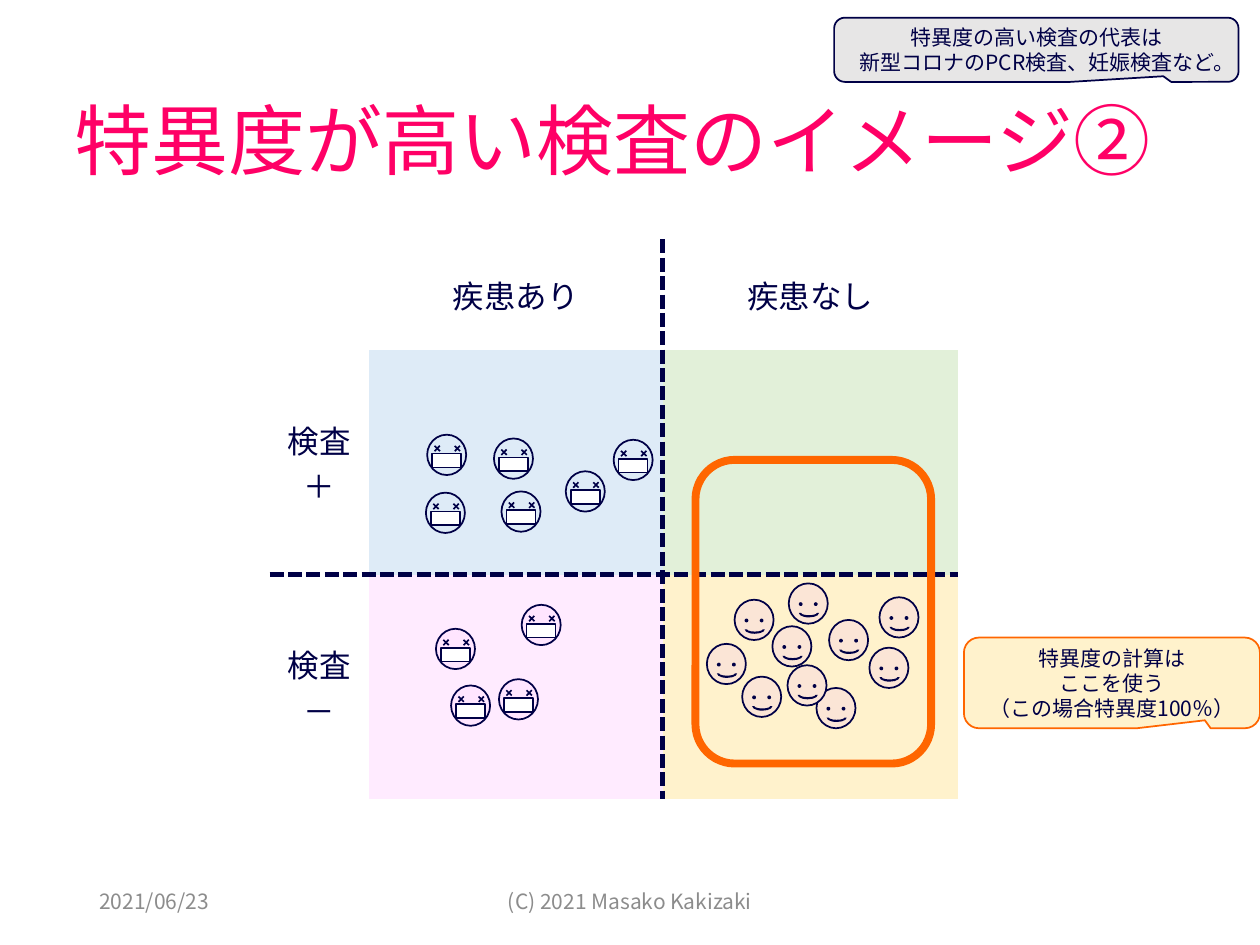
"""Build a slide that shows high test specificity on a two by two table of faces."""
from lxml.etree import SubElement
from pptx import Presentation
from pptx.dml.color import RGBColor
from pptx.enum.shapes import MSO_SHAPE as Form
from pptx.enum.text import MSO_ANCHOR, PP_ALIGN
from pptx.oxml import parse_xml
from pptx.oxml.ns import nsdecls, qn
from pptx.util import Inches, Pt

THEME = {
    "font": "Noto Sans CJK JP",
    "ink": "000046", "pink": "FF0066", "gray": "8C8C8C", "orange": "FF6600",
    "white": "FFFFFF", "blue": "DEEBF7", "green": "E2F0D9", "rose": "FFEBFF",
    "cream": "FFF2CC", "sick": "FFE5FF", "well": "FBE5D6", "ash": "E7E6E6",
    "title": 44, "label": 18, "note": 12,
}
CENTER, LEFT = PP_ALIGN.CENTER, PP_ALIGN.LEFT


def write(frame, lines, size, color="ink", align=CENTER, space=None):
    for name, value in {"word_wrap": True, "vertical_anchor": MSO_ANCHOR.MIDDLE}.items():
        setattr(frame, name, value)
    for i, line in enumerate(lines):
        para = frame.add_paragraph() if i else frame.paragraphs[0]
        for name, value in {"alignment": align, "line_spacing": space}.items():
            setattr(para, name, value)
        run = para.add_run()
        run.text = line
        for name, value in {"name": THEME["font"], "size": Pt(THEME[size])}.items():
            setattr(run.font, name, value)
        run.font.color.rgb = RGBColor.from_string(THEME[color])
        SubElement(run.font._element, qn("a:ea")).set("typeface", THEME["font"])


def draw(home, form, box, fill=None, line=None, width=1, turn=0, adjust=()):
    shape = home.add_shape(form, *map(Inches, box))
    shape.shadow.inherit = False
    shape.rotation = turn
    for i, value in enumerate(adjust):
        shape.adjustments[i] = value
    if fill:
        shape.fill.solid()
        shape.fill.fore_color.rgb = RGBColor.from_string(THEME[fill])
    else:
        shape.fill.background()
    if line:
        shape.line.color.rgb = RGBColor.from_string(THEME[line])
        shape.line.width = Pt(width)
    else:
        shape.line.fill.background()
    return shape


deck = Presentation()
for name, value in {"slide_width": Inches(10), "slide_height": Inches(7.5)}.items():
    setattr(deck, name, value)
slide = deck.slides.add_slide(deck.slide_layouts[5])
shapes = slide.shapes

title = shapes.title
for name, value in {"left": 0.49, "top": 0.42, "width": 9, "height": 1.45}.items():
    setattr(title, name, Inches(value))
write(title.text_frame, ["特異度が高い検査のイメージ②"], "title", "pink", LEFT, 0.9)

grid = shapes.add_table(3, 3, Inches(2.14), Inches(1.9), Inches(5.46), Inches(4.44)).table
for name, value in {"first_row": False, "horz_banding": False}.items():
    setattr(grid, name, value)
grid._tbl.tblPr[0].text = "{2D5ABB26-0587-4C30-8999-92F81FD0307C}"
for col, wide in zip(grid.columns, (0.79, 2.33, 2.34)):
    col.width = Inches(wide)
for row, high in zip(grid.rows, (0.88, 1.78, 1.78)):
    row.height = Inches(high)

labels = {(0, 1): ["疾患あり"], (0, 2): ["疾患なし"],
          (1, 0): ["検査", "＋"], (2, 0): ["検査", "－"]}
fills = {(1, 1): "blue", (1, 2): "green", (2, 1): "rose", (2, 2): "cream"}
for r in range(3):
    for c in range(3):
        cell = grid.cell(r, c)
        if (r, c) in labels:
            write(cell.text_frame, labels[r, c], "label")
        cell.vertical_anchor = MSO_ANCHOR.MIDDLE
        if (r, c) in fills:
            cell.fill.solid()
            cell.fill.fore_color.rgb = RGBColor.from_string(THEME[fills[r, c]])
        else:
            cell.fill.background()
        edges = {"lnL": c == 2, "lnR": c == 1, "lnT": r == 2, "lnB": r == 1}
        sides = [side for side, shown in edges.items() if shown]
        for i, side in enumerate(sides):
            cell._tc.get_or_add_tcPr().insert(i, parse_xml(
                f'<a:{side} {nsdecls("a")} w="{Pt(3)}"><a:solidFill>'
                f'<a:srgbClr val="{THEME["ink"]}"/></a:solidFill>'
                f'<a:prstDash val="dash"/></a:{side}>'))

feet = [("2021/06/23", 0.69, 2.25, LEFT), ("(C) 2021 Masako Kakizaki", 3.31, 3.38, CENTER)]
for text, left, wide, align in feet:
    box = shapes.add_textbox(Inches(left), Inches(6.95), Inches(wide), Inches(0.4))
    write(box.text_frame, [text], "note", "gray", align)

masks = {
    "sick": [(3.46, 4.99), (4.14, 4.8), (3.96, 5.39), (3.58, 5.44)],
    "blue": [(3.92, 3.48), (3.39, 3.45), (4.49, 3.74), (3.38, 3.91), (3.98, 3.9),
             (4.87, 3.49)],
}
for skin, spots in masks.items():
    for x, y in spots:
        face = shapes.add_group_shape().shapes
        draw(face, Form.OVAL, (x, y, 0.31, 0.32), skin, "ink")
        draw(face, Form.RECTANGLE, (x + 0.04, y + 0.15, 0.23, 0.11), "white", "ink")
        for step in (0.05, 0.21):
            draw(face, Form.CROSS, (x + step, y + 0.08, 0.06, 0.06), "ink",
                 turn=43.8, adjust=[0.389])

smiles = [(5.89, 5.37), (6.13, 4.97), (5.61, 5.11), (5.83, 4.76), (6.48, 5.46),
          (6.9, 5.14), (6.58, 4.92), (6.98, 4.74), (6.26, 4.63), (6.25, 5.28)]
for x, y in smiles:
    face = shapes.add_group_shape().shapes
    draw(face, Form.OVAL, (x, y, 0.31, 0.32), "well", "ink")
    for step in (0.08, 0.2):
        draw(face, Form.OVAL, (x + step, y + 0.15, 0.03, 0.03), "ink")
    draw(face, Form.BLOCK_ARC, (x + 0.08, y + 0.2, 0.16, 0.07), "ink", turn=180)

draw(shapes, Form.ROUNDED_RECTANGLE, (5.52, 3.65, 1.87, 2.41), line="orange", width=4.5)

notes = [
    ((7.65, 5.06, 2.35, 0.72), "cream", "orange",
     ["特異度の計算は", "ここを使う", "（この場合特異度100％）"]),
    ((6.62, 0.14, 3.21, 0.51), "ash", "ink",
     ["特異度の高い検査の代表は", "新型コロナのPCR検査、妊娠検査など。"]),
]
for box, fill, line, lines in notes:
    note = draw(shapes, Form.ROUNDED_RECTANGULAR_CALLOUT, box, fill, line,
                adjust=[0.314, 0.412, 0.167])
    write(note.text_frame, lines, "note")

deck.save("out.pptx")
